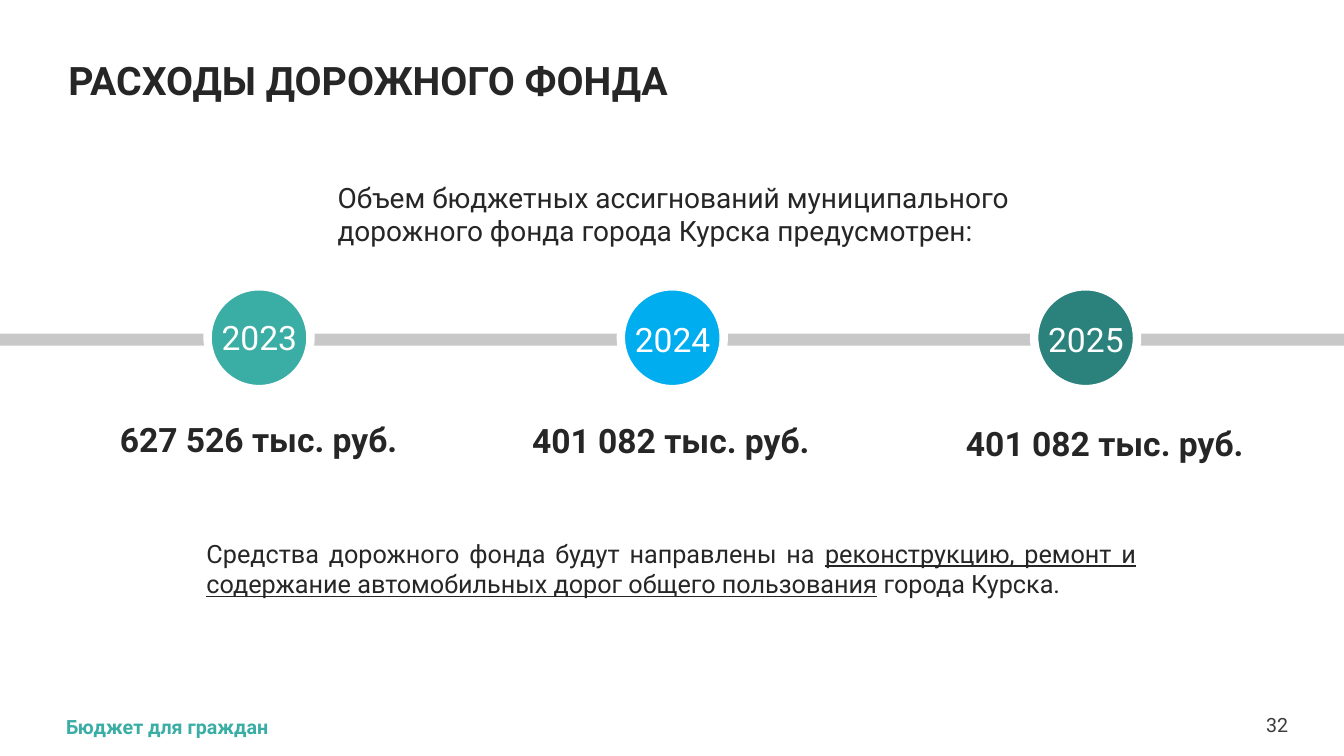
"""Build the road fund spending slide on a grid of 160 columns by 90 rows."""
from dataclasses import dataclass
from typing import NamedTuple

from pptx import Presentation
from pptx import util as u
from pptx.dml.color import RGBColor
from pptx.enum import shapes, text
from pptx.slide import Slide

WIDTH, HEIGHT = u.Inches(13.33), u.Inches(7.5)
COLUMNS, ROWS = 160, 90
LEFT, CENTER = text.PP_ALIGN.LEFT, text.PP_ALIGN.CENTER
RIGHT, JUSTIFY = text.PP_ALIGN.RIGHT, text.PP_ALIGN.JUSTIFY
TOP, MIDDLE = text.MSO_ANCHOR.TOP, text.MSO_ANCHOR.MIDDLE


@dataclass(frozen=True)
class Theme:
    font: str = "Roboto"
    ink: str = "262626"
    page: str = "3C3C3C"
    white: str = "FFFFFF"
    bar: str = "C8C8C8"
    teal: str = "3AADA5"
    blue: str = "00ADEE"
    pine: str = "2B827C"
    title_size: int = 28
    figure_size: int = 24
    intro_size: int = 20
    closing_size: int = 18
    footer_size: int = 14


THEME = Theme()


class Area(NamedTuple):
    column: float
    row: float
    columns: float
    rows: float

    def lengths(self) -> tuple[int, int, int, int]:
        return (
            int(WIDTH * self.column / COLUMNS),
            int(HEIGHT * self.row / ROWS),
            int(WIDTH * self.columns / COLUMNS),
            int(HEIGHT * self.rows / ROWS),
        )


@dataclass(frozen=True)
class Label:
    area: Area
    phrases: tuple[str, ...]
    size: int
    color: str = THEME.ink
    bold: bool = False
    align: text.PP_ALIGN = LEFT
    anchor: text.MSO_ANCHOR = TOP
    padded: bool = True
    spacing: float = 1.0
    underlined: int = -1


@dataclass(frozen=True)
class Milestone:
    year: str
    year_row: float
    amount: str
    amount_area: Area
    color: str


MILESTONES = (
    Milestone("2023", 37.08, "627 526 тыс. руб.", Area(8.76, 49.32, 44.04, 6), THEME.teal),
    Milestone("2024", 37.32, "401 082 тыс. руб.", Area(57.84, 49.44, 44.04, 6), THEME.blue),
    Milestone("2025", 37.32, "401 082 тыс. руб.", Area(110.64, 49.8, 41.76, 6), THEME.pine),
)
FIRST_CIRCLE, CIRCLE_STEP, CIRCLE_ROW, DIAMETER = 24.72, 49.2, 34.08, 12.24
YEAR_SHIFT = 0.48

LABELS = (
    Label(Area(6.96, 5.28, 142.56, 9.12), ("РАСХОДЫ ДОРОЖНОГО ФОНДА",),
          THEME.title_size, bold=True, anchor=MIDDLE, spacing=0.9),
    Label(Area(39, 20.88, 83.64, 9.24),
          ("Объем бюджетных ассигнований муниципального дорожного фонда города Курска предусмотрен:",),
          THEME.intro_size),
    Label(Area(23.4, 63.48, 113.04, 8.52),
          ("Средства дорожного фонда будут направлены на ",
           "реконструкцию, ремонт и содержание автомобильных дорог общего пользования",
           " города Курска."),
          THEME.closing_size, align=JUSTIFY, underlined=1),
    Label(Area(7.86, 85.08, 142.5, 2.88), ("Бюджет для граждан",),
          THEME.footer_size, THEME.teal, bold=True, padded=False),
    Label(Area(150.36, 84.84, 3, 2.88), ("32",), THEME.footer_size, THEME.page,
          align=RIGHT, anchor=MIDDLE, padded=False),
)


def add_label(slide: Slide, label: Label) -> None:
    frame = slide.shapes.add_textbox(*label.area.lengths()).text_frame
    frame.word_wrap = True
    frame.vertical_anchor = label.anchor
    if not label.padded:
        frame.margin_left = frame.margin_right = 0
        frame.margin_top = frame.margin_bottom = 0
    paragraph = frame.paragraphs[0]
    paragraph.alignment = label.align
    paragraph.line_spacing = label.spacing
    for index, phrase in enumerate(label.phrases):
        run = paragraph.add_run()
        run.text = phrase
        run.font.name = THEME.font
        run.font.size = u.Pt(label.size)
        run.font.bold = label.bold
        run.font.color.rgb = RGBColor.from_string(label.color)
        if index == label.underlined:
            run.font.underline = True


def add_figure(slide: Slide, kind: shapes.MSO_SHAPE, area: Area, color: str,
               outline: float = 0) -> None:
    shape = slide.shapes.add_shape(kind, *area.lengths())
    shape.shadow.inherit = False
    shape.fill.solid()
    shape.fill.fore_color.rgb = RGBColor.from_string(color)
    if outline:
        shape.line.color.rgb = RGBColor.from_string(THEME.white)
        shape.line.width = u.Pt(outline)
    else:
        shape.line.fill.background()


def add_milestone(slide: Slide, milestone: Milestone, column: float) -> None:
    circle = Area(column, CIRCLE_ROW, DIAMETER, DIAMETER)
    add_figure(slide, shapes.MSO_SHAPE.OVAL, circle, milestone.color, outline=6)
    year_area = Area(column + YEAR_SHIFT, milestone.year_row, DIAMETER, 6)
    add_label(slide, Label(year_area, (milestone.year,), THEME.figure_size, THEME.white))
    add_label(slide, Label(milestone.amount_area, (milestone.amount,), THEME.figure_size,
                           bold=True, align=CENTER))


def main() -> None:
    presentation = Presentation()
    presentation.slide_width, presentation.slide_height = WIDTH, HEIGHT
    slide = presentation.slides.add_slide(presentation.slide_layouts[6])
    add_figure(slide, shapes.MSO_SHAPE.RECTANGLE, Area(0, 39.72, COLUMNS, 1.44), THEME.bar)
    for index, milestone in enumerate(MILESTONES):
        add_milestone(slide, milestone, FIRST_CIRCLE + index * CIRCLE_STEP)
    for label in LABELS:
        add_label(slide, label)
    presentation.save("out.pptx")


if __name__ == "__main__":
    main()
